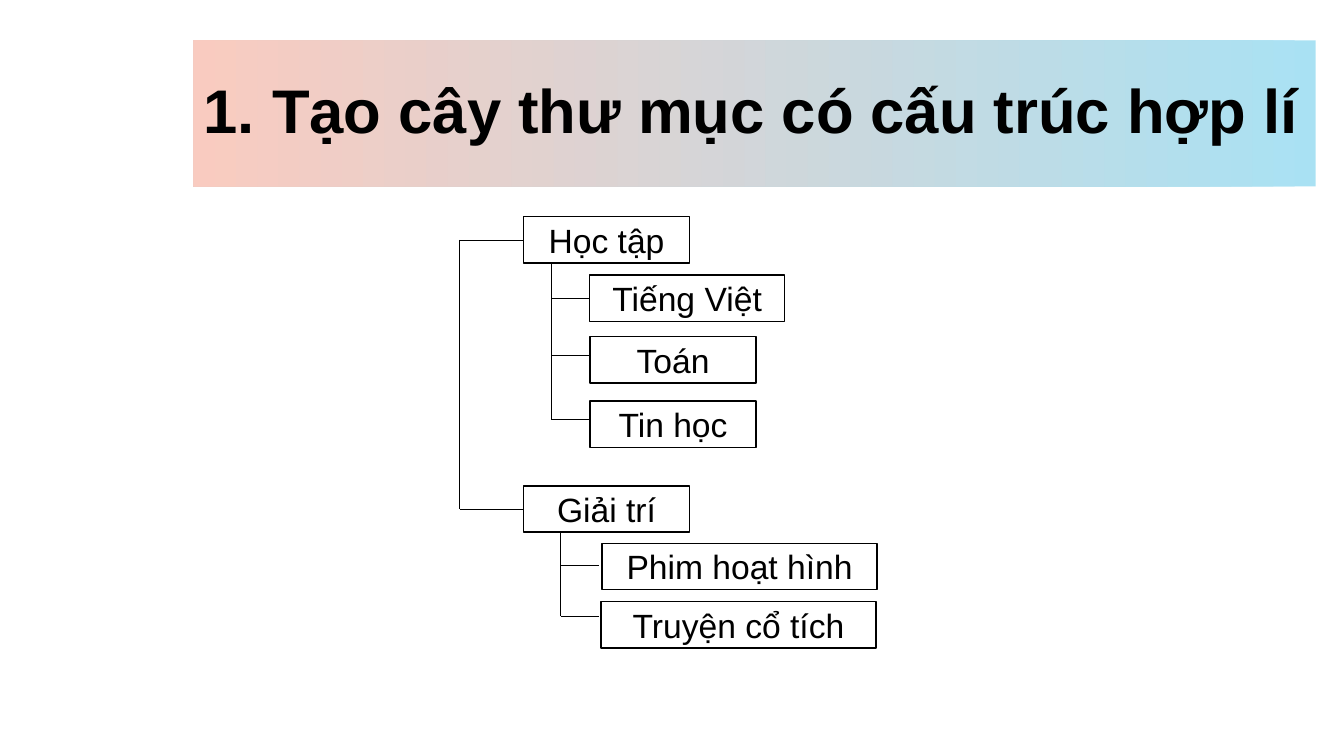
from dataclasses import dataclass

from lxml import etree
from pptx import Presentation
from pptx.dml.color import RGBColor as RGB
from pptx.enum.shapes import MSO_CONNECTOR as Conn, MSO_SHAPE as Shape
from pptx.enum.text import MSO_ANCHOR as Anchor, MSO_AUTO_SIZE as Fit, PP_ALIGN as Align
from pptx.oxml.ns import qn
from pptx.util import Inches, Pt


@dataclass(frozen=True)
class Theme:
    font: str = "Arial"
    ink: RGB = RGB(0, 0, 0)
    paper: RGB = RGB(255, 255, 255)
    blue: RGB = RGB.from_string("8DD8F0")
    pink: RGB = RGB.from_string("F8BAAB")
    alpha: int = 75
    head: int = 44
    body: int = 24
    edge: float = 1
    wire: float = 0.5


THEME = Theme()
HIGH = 0.46
ROOT = 4.56
FOLDERS = [
    ("Học tập", 2.15, 5.47, [
        ("Tiếng Việt", 5.85, 2.73, 1.93, 5.85, None),
        ("Toán", 5.85, 3.34, 1.65, 5.85, 3.53),
        ("Tin học", 5.85, 3.98, 1.65, 5.85, 4.16),
    ]),
    ("Giải trí", 4.82, 5.56, [
        ("Phim hoạt hình", 5.97, 5.39, 2.73, 5.94, 5.61),
        ("Truyện cổ tích", 5.96, 5.97, 2.73, 5.94, 6.11),
    ]),
]


def style(para, size, align, bold=False):
    para.alignment = align
    font = para.font
    font.name, font.size, font.bold = THEME.font, Pt(size), bold
    font.color.rgb = THEME.ink


def add_title(slide, text):
    title = slide.shapes.title
    title.left, title.top = Inches(1.92), Inches(0.4)
    title.width, title.height = Inches(11.13), Inches(1.45)
    title.fill.gradient()
    title.fill.gradient_angle = 180
    for stop, color in zip(title.fill.gradient_stops, (THEME.blue, THEME.pink)):
        stop.color.rgb = color
    for node in title.element.spPr.iter(qn("a:srgbClr")):
        etree.SubElement(node, qn("a:alpha"), val=str(THEME.alpha * 1000))
    frame = title.text_frame
    frame.text = text
    frame.word_wrap = True
    frame.auto_size = Fit.NONE
    frame.vertical_anchor = Anchor.MIDDLE
    para = frame.paragraphs[0]
    para.line_spacing = 0.9
    style(para, THEME.head, Align.LEFT, True)


def add_box(slide, text, x, y, width):
    box = slide.shapes.add_shape(
        Shape.RECTANGLE, Inches(x), Inches(y), Inches(width), Inches(HIGH))
    box.shadow.inherit = False
    box.fill.solid()
    box.fill.fore_color.rgb = THEME.paper
    box.line.color.rgb = THEME.ink
    box.line.width = Pt(THEME.edge)
    frame = box.text_frame
    frame.text = text
    frame.word_wrap = True
    frame.vertical_anchor = Anchor.MIDDLE
    style(frame.paragraphs[0], THEME.body, Align.CENTER)
    return box


def add_wire(slide, x1, y1, x2, y2, box=None):
    wire = slide.shapes.add_connector(
        Conn.STRAIGHT, Inches(x1), Inches(y1), Inches(x2), Inches(y2))
    wire.line.color.rgb = THEME.ink
    wire.line.width = Pt(THEME.wire)
    etree.SubElement(wire.element.spPr, qn("a:effectLst"))
    if box is not None:
        wire.end_connect(box, 1)


def add_leaf(slide, trunk, text, x, y, width, end, joint):
    box = add_box(slide, text, x, y, width)
    level = joint or y + HIGH / 2
    add_wire(slide, trunk, level, end, level, None if joint else box)
    return level


def add_folder(slide, text, y, trunk, leaves):
    box = add_box(slide, text, 5.19, y, 1.65)
    level = y + HIGH / 2
    add_wire(slide, ROOT, level, 5.19, level, box)
    ends = [add_leaf(slide, trunk, *leaf) for leaf in leaves]
    add_wire(slide, trunk, y + HIGH, trunk, ends[-1])
    return level


def main():
    deck = Presentation()
    deck.slide_width, deck.slide_height = Inches(13.33), Inches(7.5)
    slide = deck.slides.add_slide(deck.slide_layouts[5])
    add_title(slide, "1. Tạo cây thư mục có cấu trúc hợp lí")
    levels = [add_folder(slide, *folder) for folder in FOLDERS]
    add_wire(slide, ROOT, levels[0], ROOT, levels[-1])
    deck.save("out.pptx")


if __name__ == "__main__":
    main()
